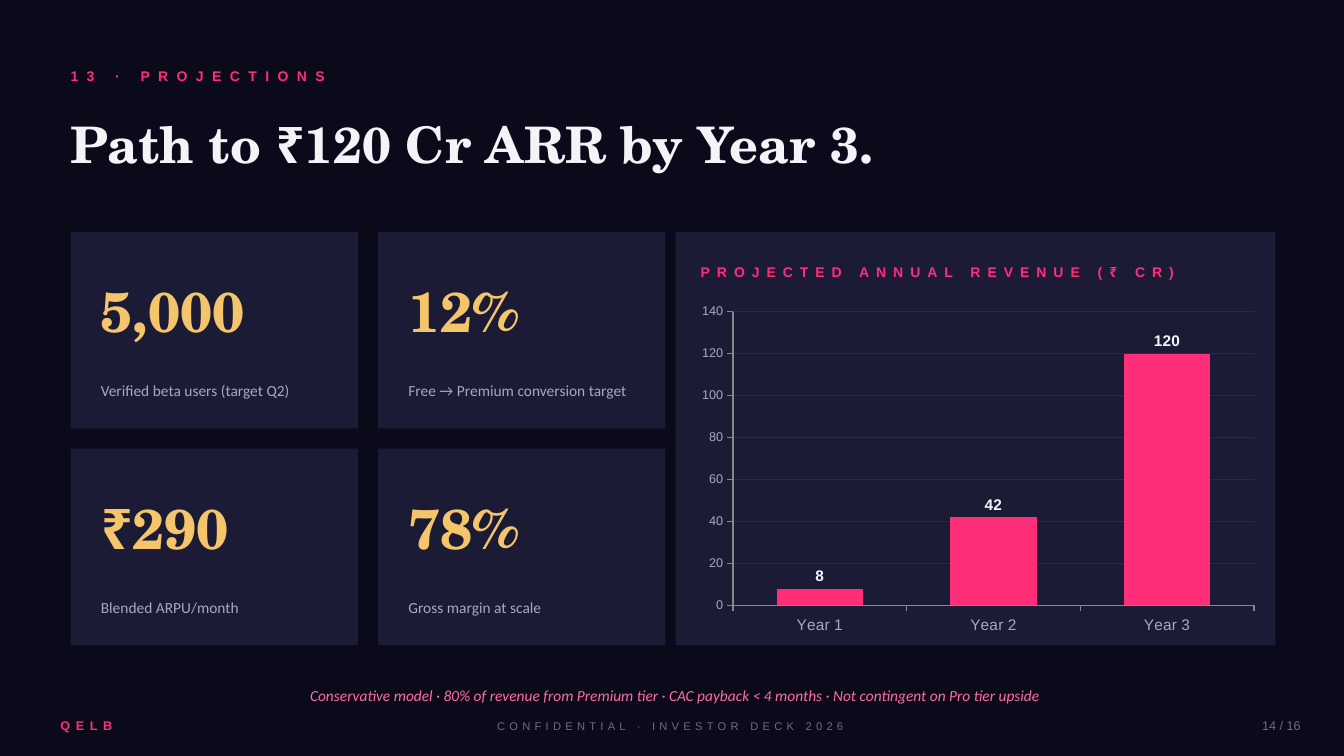
from dataclasses import dataclass

from lxml import etree
from pptx import Presentation
from pptx.chart.data import CategoryChartData
from pptx.dml.color import RGBColor
from pptx.enum.chart import XL_CHART_TYPE as ChartType, XL_LABEL_POSITION as LabelPos
from pptx.enum.chart import XL_TICK_LABEL_POSITION as TickLabelPos, XL_TICK_MARK as TickMark
from pptx.enum.shapes import MSO_SHAPE as Preset
from pptx.enum.text import MSO_ANCHOR as Anchor, PP_ALIGN as Align
from pptx.oxml import parse_xml
from pptx.oxml.ns import nsdecls, qn
from pptx.slide import Slide
from pptx.util import Inches, Pt

COLORS = {
    "night": "0A0A1A", "panel": "1B1B36", "pink": "FF2E78", "rose": "FF6BA4",
    "gold": "F5C56C", "white": "F4F4F8", "mist": "A8A8C0", "slate": "6B6B85",
    "axis": "888888", "grid": "2A2A45",
}
SERIF = "TeX Gyre Schola"
Box = tuple[float, float, float, float]


@dataclass(frozen=True)
class Metric:
    value: str
    caption: str


METRICS = [
    Metric("5,000", "Verified beta users (target Q2)"),
    Metric("12%", "Free → Premium conversion target"),
    Metric("₹290", "Blended ARPU/month"),
    Metric("78%", "Gross margin at scale"),
]
REVENUE = {"Year 1": 8, "Year 2": 42, "Year 3": 120}


def rgb(name: str) -> RGBColor:
    return RGBColor.from_string(COLORS[name])


def style_font(font, size: float, color: str, name: str = "Arial",
               bold: bool = False, italic: bool = False) -> None:
    font.size, font.name, font.bold, font.italic = Pt(size), name, bold, italic
    font.color.rgb = rgb(color)


def add_text(slide: Slide, text: str, box: Box, *, size: float, color: str,
             font: str = "Arial", bold: bool = False, italic: bool = False,
             spacing: float = 0, align: Align = Align.LEFT,
             line_spacing: float | None = None) -> None:
    frame = slide.shapes.add_textbox(*map(Inches, box)).text_frame
    frame.word_wrap = True
    frame.vertical_anchor = Anchor.MIDDLE
    frame.margin_left = frame.margin_right = frame.margin_top = frame.margin_bottom = 0
    paragraph = frame.paragraphs[0]
    paragraph.alignment = align
    if line_spacing:
        paragraph.line_spacing = line_spacing
    run = paragraph.add_run()
    run.text = text
    style_font(run.font, size, color, font, bold, italic)
    if spacing:
        run.font._element.set("spc", str(round(spacing * 100)))


def add_panel(slide: Slide, box: Box) -> None:
    panel = slide.shapes.add_shape(Preset.RECTANGLE, *map(Inches, box))
    panel.shadow.inherit = False
    panel.fill.solid()
    panel.fill.fore_color.rgb = rgb("panel")
    panel.line.fill.background()


def add_metric(slide: Slide, metric: Metric, left: float, top: float) -> None:
    add_panel(slide, (left, top, 2.85, 1.95))
    add_text(slide, metric.value, (left + 0.3, top + 0.3, 2.25, 0.95),
             size=40, color="gold", font=SERIF, bold=True)
    add_text(slide, metric.caption, (left + 0.3, top + 1.25, 2.25, 0.6),
             size=11, color="mist", font="Calibri", line_spacing=1.3)


def panel_fill() -> etree._Element:
    return parse_xml(
        f'<c:spPr {nsdecls("c", "a")}><a:solidFill><a:srgbClr val="{COLORS["panel"]}"/>'
        "</a:solidFill><a:ln><a:noFill/></a:ln></c:spPr>")


def style_axis(axis, label_size: float) -> None:
    axis.major_tick_mark, axis.minor_tick_mark = TickMark.OUTSIDE, TickMark.NONE
    axis.format.line.color.rgb = rgb("axis")
    axis.format.line.width = Pt(1)
    style_font(axis.tick_labels.font, label_size, "mist")


def add_revenue_chart(slide: Slide, box: Box) -> None:
    data = CategoryChartData()
    data.categories = list(REVENUE)
    data.add_series("Series 1", list(REVENUE.values()))
    chart = slide.shapes.add_chart(
        ChartType.COLUMN_CLUSTERED, *map(Inches, box), data).chart
    chart.has_legend = chart.has_title = False
    style_font(chart.font, 10, "mist", "Calibri")

    chart_root = chart._chartSpace.find(qn("c:chart"))
    chart_root.addnext(panel_fill())
    chart_root.find(qn("c:plotArea")).append(panel_fill())

    style_axis(chart.category_axis, 11)
    chart.category_axis.tick_label_position = TickLabelPos.LOW
    style_axis(chart.value_axis, 9)
    gridlines = chart.value_axis.major_gridlines.format.line
    gridlines.color.rgb = rgb("grid")
    gridlines.width = Pt(0.5)

    plot = chart.plots[0]
    plot.gap_width = 100
    plot.vary_by_categories = False
    revenue = plot.series[0]
    revenue.format.fill.solid()
    revenue.format.fill.fore_color.rgb = rgb("pink")
    labels = revenue.data_labels
    labels.show_value = True
    labels.number_format, labels.number_format_is_linked = "#,##0", False
    labels.position = LabelPos.OUTSIDE_END
    style_font(labels.font, 11, "white", bold=True)


def main() -> None:
    """Build the revenue projections slide and save it."""
    deck = Presentation()
    deck.slide_width, deck.slide_height = Inches(13.33), Inches(7.5)
    slide = deck.slides.add_slide(deck.slide_layouts[6])
    slide.background.fill.solid()
    slide.background.fill.fore_color.rgb = rgb("night")

    add_text(slide, "13 · PROJECTIONS", (0.7, 0.6, 8, 0.3),
             size=10, color="pink", bold=True, spacing=6)
    add_text(slide, "Path to ₹120 Cr ARR by Year 3.", (0.7, 1, 12, 0.85),
             size=36, color="white", font=SERIF, bold=True)

    for index, metric in enumerate(METRICS):
        row, column = divmod(index, 2)
        add_metric(slide, metric, 0.7 + 3.05 * column, 2.3 + 2.15 * row)

    add_panel(slide, (6.7, 2.3, 5.95, 4.1))
    add_text(slide, "PROJECTED ANNUAL REVENUE (₹ CR)", (6.95, 2.55, 5.5, 0.3),
             size=10, color="pink", bold=True, spacing=5)
    add_revenue_chart(slide, (6.85, 2.95, 5.7, 3.4))

    add_text(slide, "Conservative model · 80% of revenue from Premium tier · "
             "CAC payback < 4 months · Not contingent on Pro tier upside",
             (0.7, 6.75, 12, 0.3), size=11, color="rose", font="Calibri",
             italic=True, align=Align.CENTER)
    add_text(slide, "QELB", (0.6, 7.05, 1, 0.3),
             size=9, color="pink", bold=True, spacing=4)
    add_text(slide, "CONFIDENTIAL · INVESTOR DECK 2026", (4.65, 7.05, 4, 0.3),
             size=8, color="slate", spacing=3, align=Align.CENTER)
    add_text(slide, "14 / 16", (12.1, 7.05, 0.8, 0.3),
             size=9, color="slate", align=Align.RIGHT)

    deck.save("out.pptx")


if __name__ == "__main__":
    main()
